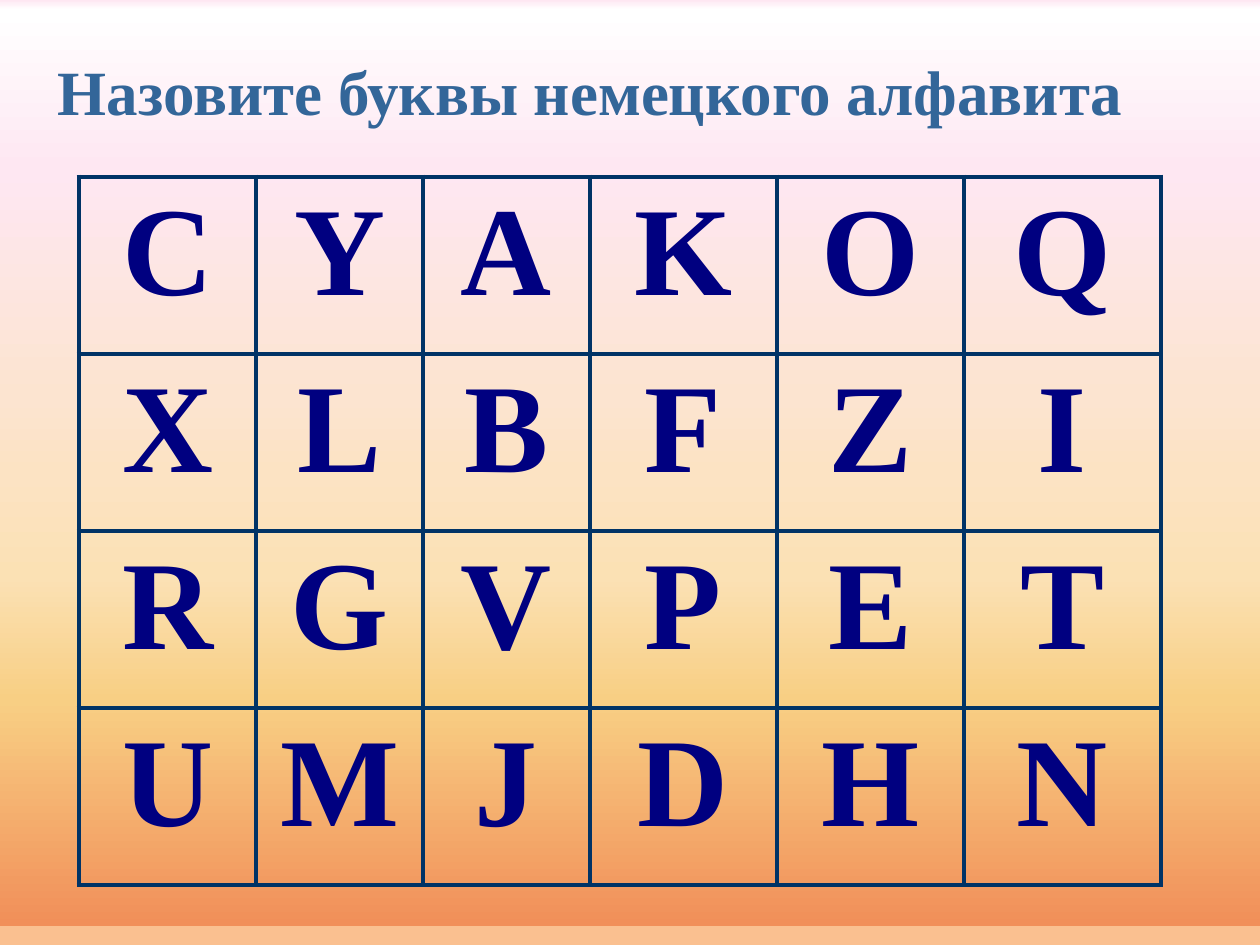
from dataclasses import dataclass

import pptx
import pptx.dml.color
import pptx.enum.text
import pptx.oxml
import pptx.oxml.ns
import pptx.util

SCALE = 914400 / 126  # EMU in one px


@dataclass(frozen=True)
class Theme:
    font: str = "Times New Roman"
    title_size: int = 36
    letter_size: int = 72
    title_color: str = "336699"
    letter_color: str = "000080"
    border_color: str = "003366"
    border_width: int = 3
    background: tuple = (
        (0, "FEE7F2"), (1, "FFFFFF"), (18, "FEE7F2"), (42, "FCE4D0"),
        (50, "FCE3C3"), (61, "FBE1B4"), (74, "F8CF84"), (98, "F18F59"),
        (98, "FAC090"), (100, "FAC090"),
    )


THEME = Theme()
LETTER_ROWS = ("СYAKOQ", "XLBFZI", "RGVPET", "UMJDHN")
COLUMN_WIDTHS = (177, 167, 167, 187, 187, 197)
ROW_HEIGHT = 177


def px(n):
    return pptx.util.Emu(round(n * SCALE))


def set_text(tf, text, size, color):
    """Put one centred bold line into a text frame."""
    tf.text = text
    p = tf.paragraphs[0]
    p.alignment = pptx.enum.text.PP_ALIGN.CENTER
    font = p.runs[0].font
    font.name = THEME.font
    font.size = pptx.util.Pt(size)
    font.bold = True
    font.color.rgb = pptx.dml.color.RGBColor.from_string(color)


def set_background(s):
    fill = s.background.fill
    fill.gradient()
    fill.gradient_angle = 270
    stops = s.background._cSld.find(".//" + pptx.oxml.ns.qn("a:gsLst"))
    for stop in list(stops):
        stops.remove(stop)
    for position, color in THEME.background:
        stops.append(pptx.oxml.parse_xml(
            f'<a:gs {pptx.oxml.ns.nsdecls("a")} pos="{position * 1000}">'
            f'<a:srgbClr val="{color}"/></a:gs>'))


def set_borders(cell):
    width = pptx.util.Pt(THEME.border_width)
    properties = cell._tc.get_or_add_tcPr()
    for side in "LRTB":
        properties.append(pptx.oxml.parse_xml(
            f'<a:ln{side} {pptx.oxml.ns.nsdecls("a")} w="{width}"><a:solidFill>'
            f'<a:srgbClr val="{THEME.border_color}"/></a:solidFill></a:ln{side}>'))


def add_title(s, text, left, top, width, height):
    tf = s.shapes.add_textbox(px(left), px(top), px(width), px(height)).text_frame
    tf.word_wrap = False
    tf.margin_left = tf.margin_right = 0
    set_text(tf, text, THEME.title_size, THEME.title_color)


def add_letter_table(s, left, top):
    table = s.shapes.add_table(
        len(LETTER_ROWS), len(COLUMN_WIDTHS), px(left), px(top),
        px(sum(COLUMN_WIDTHS)), px(ROW_HEIGHT * len(LETTER_ROWS))).table
    table.first_row = table.horz_banding = False
    for column, width in zip(table.columns, COLUMN_WIDTHS):
        column.width = px(width)
    for row, letters in zip(table.rows, LETTER_ROWS):
        row.height = px(ROW_HEIGHT)
        for cell, letter in zip(row.cells, letters):
            set_borders(cell)
            cell.fill.background()
            set_text(cell.text_frame, letter, THEME.letter_size, THEME.letter_color)


def main():
    prs = pptx.Presentation()
    prs.slide_width, prs.slide_height = px(1260), px(945)
    s = prs.slides.add_slide(prs.slide_layouts[6])
    set_background(s)
    add_letter_table(s, 79, 177)
    add_title(s, "Назовите буквы немецкого алфавита", 50, 46, 1081, 89)
    prs.save("out.pptx")


if __name__ == "__main__":
    main()
